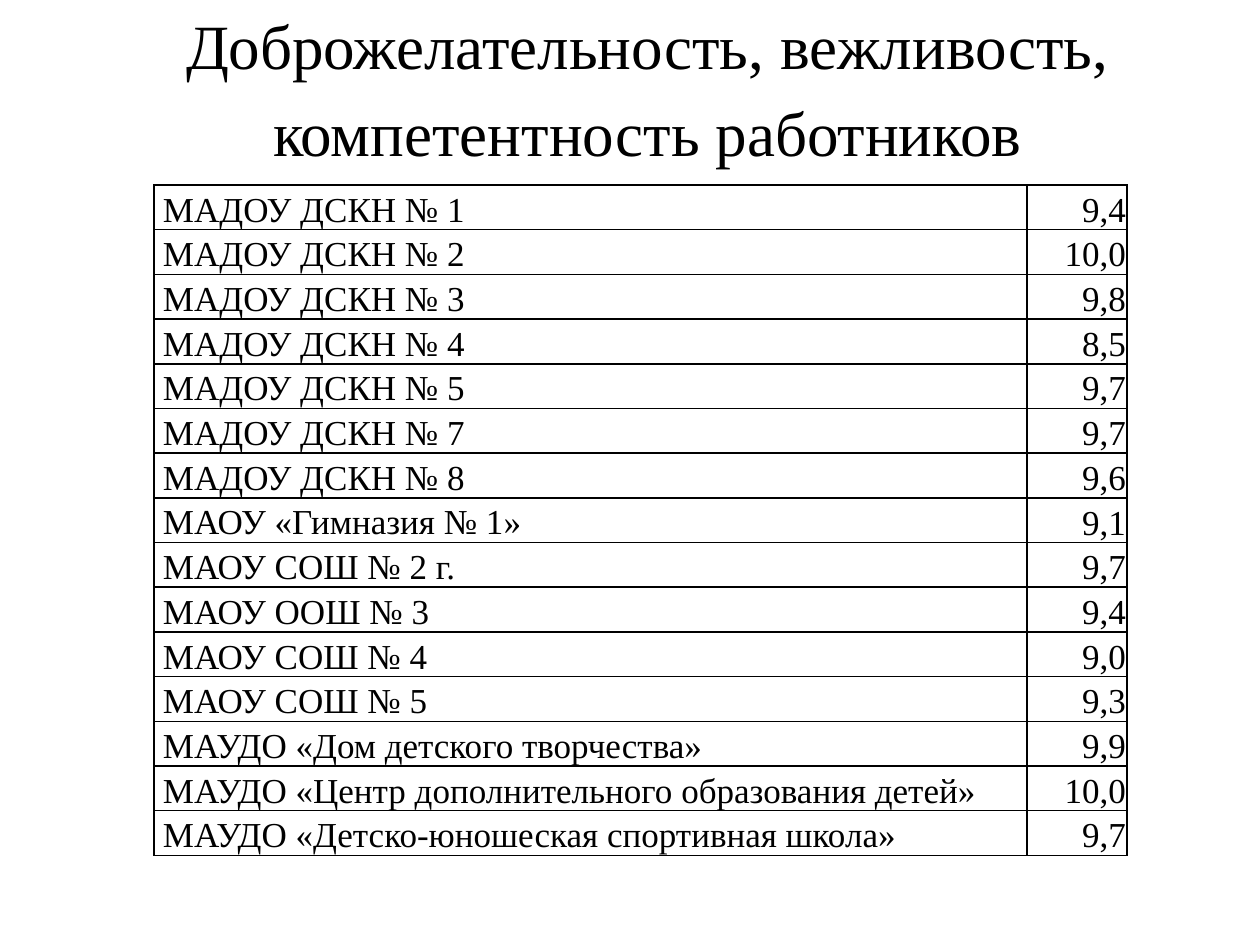
from lxml.etree import SubElement
from pptx import Presentation
from pptx.dml.color import RGBColor
from pptx.enum.text import MSO_ANCHOR as Anchor, MSO_AUTO_SIZE as AutoSize, PP_ALIGN as Align
from pptx.oxml.ns import qn
from pptx.util import Emu, Pt

BLACK = RGBColor(0, 0, 0)
FONT = "Times New Roman"
EMU_PER_PX = 914400 / 126
TITLE = "Доброжелательность, вежливость, компетентность работников"
SCORES = [
    ("МАДОУ ДСКН № 1", "9,4"),
    ("МАДОУ ДСКН № 2", "10,0"),
    ("МАДОУ ДСКН № 3", "9,8"),
    ("МАДОУ ДСКН № 4", "8,5"),
    ("МАДОУ ДСКН № 5", "9,7"),
    ("МАДОУ ДСКН № 7", "9,7"),
    ("МАДОУ ДСКН № 8", "9,6"),
    ("МАОУ «Гимназия № 1»", "9,1"),
    ("МАОУ СОШ № 2 г.", "9,7"),
    ("МАОУ ООШ № 3", "9,4"),
    ("МАОУ СОШ № 4", "9,0"),
    ("МАОУ СОШ № 5", "9,3"),
    ("МАУДО «Дом детского творчества»", "9,9"),
    ("МАУДО «Центр дополнительного образования детей»", "10,0"),
    ("МАУДО «Детско-юношеская спортивная школа»", "9,7"),
]


def px(length):
    return Emu(round(length * EMU_PER_PX))


def write_text(frame, text, size, align=Align.LEFT, spacing=None):
    para = frame.paragraphs[0]
    para.alignment = align
    para.line_spacing = spacing
    span = para.add_run()
    span.text = text
    span.font.name = FONT
    span.font.size = Pt(size)
    span.font.color.rgb = BLACK


def add_borders(cell, width=1):
    properties = cell._tc.get_or_add_tcPr()
    for side in ("a:lnL", "a:lnR", "a:lnT", "a:lnB"):
        line = SubElement(properties, qn(side), w=str(Pt(width)))
        fill = SubElement(line, qn("a:solidFill"))
        SubElement(fill, qn("a:srgbClr"), val=str(BLACK))


def format_cell(cell, side_inset, top_inset, anchor):
    cell.margin_left = cell.margin_right = px(side_inset)
    cell.margin_top, cell.margin_bottom = px(top_inset), 0
    cell.vertical_anchor = anchor
    add_borders(cell)
    cell.fill.background()


def place_title(page, left, top, width, height):
    title = page.shapes.title
    title.left, title.top = px(left), px(top)
    title.width, title.height = px(width), px(height)
    frame = title.text_frame
    frame.word_wrap = True
    frame.auto_size = AutoSize.NONE
    frame.vertical_anchor = Anchor.MIDDLE
    write_text(frame, TITLE, 36, align=Align.CENTER, spacing=1.15)


def place_score_table(page, left, top, width, height, score_width=100):
    box = page.shapes.add_table(len(SCORES), 2, px(left), px(top), px(width), px(height))
    table = box.table
    table.first_row = table.horz_banding = False
    table.columns[0].width = px(width - score_width)
    table.columns[1].width = px(score_width)
    for row, (school, score) in zip(table.rows, SCORES):
        school_cell, score_cell = row.cells
        format_cell(school_cell, 9, 0, Anchor.TOP)
        write_text(school_cell.text_frame, school, 20, spacing=1.15)
        format_cell(score_cell, 1, 1, Anchor.BOTTOM)
        write_text(score_cell.text_frame, score, 20, align=Align.RIGHT)


def main():
    deck = Presentation()
    deck.slide_width, deck.slide_height = px(1260), px(945)
    page = deck.slides.add_slide(deck.slide_layouts[5])
    place_title(page, 35, 18, 1225, 129)
    place_score_table(page, 154, 185, 973, 667)
    deck.save("out.pptx")


if __name__ == "__main__":
    main()
